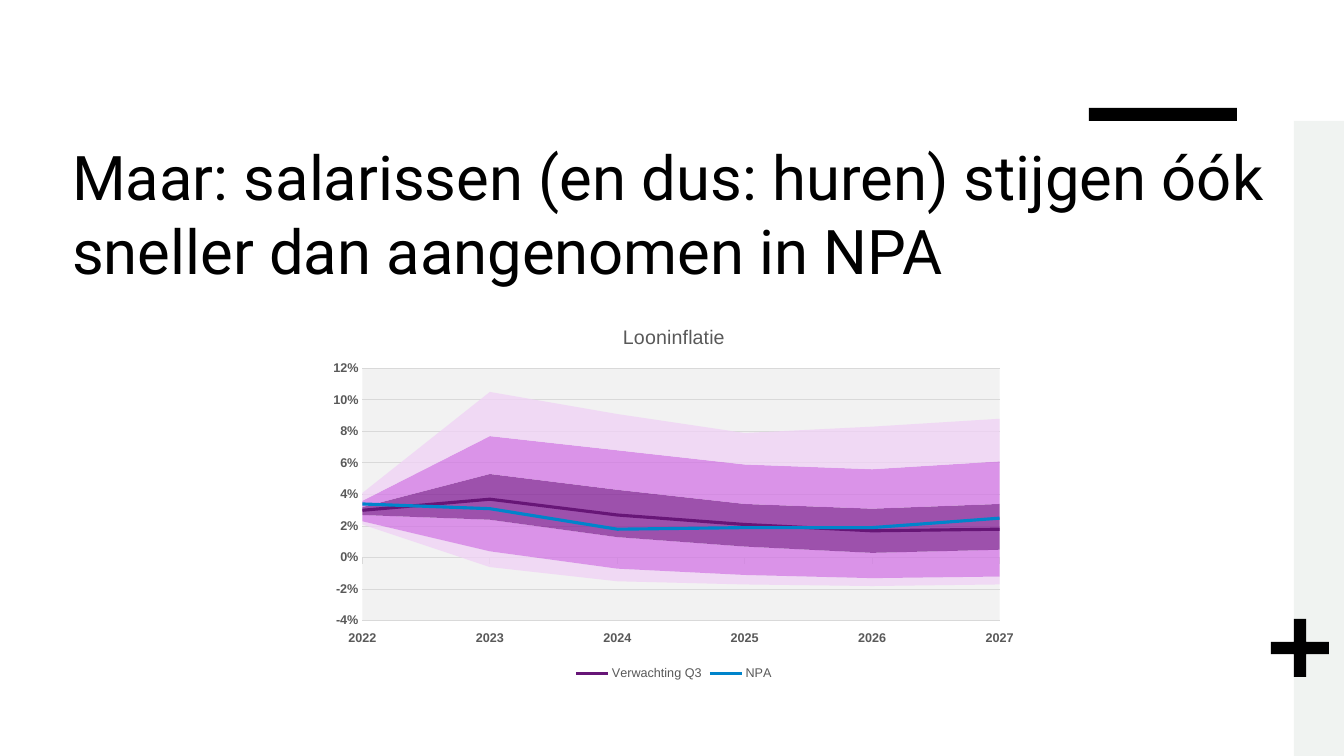
import lxml.etree
import pptx
import pptx.chart.data
import pptx.dml.color
import pptx.enum.chart
import pptx.enum.shapes
import pptx.enum.text
import pptx.oxml
import pptx.oxml.ns
import pptx.util

PX = 914400 / 100.8
COLORS = {
    "black": "000000", "white": "FFFFFF", "strip": "F0F3F1",
    "plot": "F2F2F2", "grid": "D9D9D9", "label": "595959",
    "outer": "F0D1F6", "middle": "D274E5", "inner": "811C95",
    "forecast": "671677", "npa": "0084CB",
}
YEARS = ["2022", "2023", "2024", "2025", "2026", "2027"]
BANDS = [
    (None, [0.021, -0.006, -0.015, -0.017, -0.018, -0.017]),
    ("outer", [0.002, 0.01, 0.008, 0.006, 0.005, 0.005]),
    ("middle", [0.004, 0.02, 0.02, 0.018, 0.016, 0.017]),
    ("inner", [0.005, 0.029, 0.03, 0.027, 0.028, 0.029]),
    ("middle", [0.004, 0.024, 0.025, 0.025, 0.025, 0.027]),
    ("outer", [0.005, 0.028, 0.023, 0.02, 0.027, 0.027]),
]
LINES = [
    ("Verwachting Q3", "forecast", [0.03, 0.037, 0.027, 0.021, 0.017, 0.018]),
    ("NPA", "npa", [0.034, 0.031, 0.018, 0.019, 0.019, 0.025]),
]


def emu(*lengths):
    return [pptx.util.Emu(round(length * PX)) for length in lengths]


def rgb(name):
    return pptx.dml.color.RGBColor.from_string(COLORS[name])


def chart_element(tag, **attributes):
    element = pptx.oxml.parse_xml(
        f'<c:{tag} {pptx.oxml.ns.nsdecls("c")}/>')
    for name, value in attributes.items():
        element.set(name, str(value))
    return element


def style_font(font, size, color="label", bold=False, name="Arial"):
    font.name = name
    font.size = pptx.util.Pt(size)
    font.bold = bold
    font.color.rgb = rgb(color)


def add_ornament(slide, kind, box, color):
    ornament = slide.shapes.add_shape(kind, *emu(*box))
    ornament.shadow.inherit = False
    ornament.fill.solid()
    ornament.fill.fore_color.rgb = rgb(color)
    ornament.line.fill.background()
    return ornament


def add_decoration(slide):
    kinds = pptx.enum.shapes.MSO_SHAPE
    add_ornament(slide, kinds.RECTANGLE, (1089, 108, 148, 13), "black")
    add_ornament(slide, kinds.RECTANGLE, (1294, 121, 50, 635), "strip")
    plus = add_ornament(slide, kinds.CROSS, (1271, 619, 58, 58), "black")
    plus.adjustments[0] = 0.395


def fill_title(slide, box, text):
    title = slide.shapes.title
    title.left, title.top, title.width, title.height = emu(*box)
    frame = title.text_frame
    frame.text = text
    frame.word_wrap = True
    frame.auto_size = pptx.enum.text.MSO_AUTO_SIZE.NONE
    frame.vertical_anchor = pptx.enum.text.MSO_ANCHOR.BOTTOM
    paragraph = frame.paragraphs[0]
    paragraph.alignment = pptx.enum.text.PP_ALIGN.LEFT
    style_font(paragraph.font, 44, "black", name="Roboto")


def style_series(plot):
    series = list(plot.series)
    for band, (color, _) in zip(series, BANDS):
        band.format.line.fill.background()
        if color is None:
            band.format.fill.background()
            continue
        band.format.fill.solid()
        band.format.fill.fore_color.rgb = rgb(color)
        swatch = band.format.fill._xPr.find(".//" + pptx.oxml.ns.qn("a:srgbClr"))
        lxml.etree.SubElement(swatch, pptx.oxml.ns.qn("a:alpha"), val="75000")
    for line, (_, color, _) in zip(series[len(BANDS):], LINES):
        line.format.line.color.rgb = rgb(color)
        line.format.line.width = pptx.util.Pt(2.25)
    return series[len(BANDS):]


def move_to_line_plot(chart, line_series):
    """Draw the given area series as lines on the same axes."""
    area_plot = chart.plots[0]._element
    line_plot = chart_element("lineChart")
    line_plot.append(chart_element("grouping", val="standard"))
    line_plot.append(chart_element("varyColors", val=0))
    for series in line_series:
        ser = series._element
        line_plot.append(ser)
        marker = chart_element("marker")
        marker.append(chart_element("symbol", val="none"))
        ser.find(pptx.oxml.ns.qn("c:spPr")).addnext(marker)
        ser.append(chart_element("smooth", val=0))
    line_plot.append(chart_element("marker", val=1))
    for axis_id in area_plot.findall(pptx.oxml.ns.qn("c:axId")):
        line_plot.append(chart_element("axId", val=axis_id.get("val")))
    area_plot.addnext(line_plot)


def style_axes(chart):
    ticks = pptx.enum.chart.XL_TICK_MARK
    years, rates = chart.category_axis, chart.value_axis
    for axis in (years, rates):
        style_font(axis.tick_labels.font, 9, bold=True)
        axis.minor_tick_mark = ticks.NONE
    years.has_major_gridlines = False
    years.major_tick_mark = ticks.OUTSIDE
    years.tick_label_position = pptx.enum.chart.XL_TICK_LABEL_POSITION.LOW
    rates.minimum_scale, rates.maximum_scale = -0.04, 0.12
    rates.major_unit = 0.02
    rates.major_tick_mark = ticks.NONE
    rates.tick_labels.number_format = "0%"
    rates.tick_labels.number_format_is_linked = False
    rates.format.line.fill.background()
    rates.has_major_gridlines = True
    for line in (years.format.line, rates.major_gridlines.format.line):
        line.color.rgb = rgb("grid")
        line.width = pptx.util.Pt(0.75)
    for crossing in rates._element.findall(pptx.oxml.ns.qn("c:crossBetween")):
        crossing.set("val", "midCat")


def style_legend(chart):
    chart.has_legend = True
    legend = chart.legend
    legend.position = pptx.enum.chart.XL_LEGEND_POSITION.BOTTOM
    legend.include_in_layout = False
    style_font(legend.font, 9)
    position = legend._element.find(pptx.oxml.ns.qn("c:legendPos"))
    for index in reversed(range(len(BANDS))):
        entry = chart_element("legendEntry")
        entry.append(chart_element("idx", val=index))
        entry.append(chart_element("delete", val=1))
        position.addnext(entry)


def style_backgrounds(chart, plot_box):
    """Fill chart and plot; plot_box holds fractions of the chart box."""
    def fill(color):
        return pptx.oxml.parse_xml(
            f'<c:spPr {pptx.oxml.ns.nsdecls("c", "a")}><a:solidFill>'
            f'<a:srgbClr val="{COLORS[color]}"/></a:solidFill>'
            '<a:ln><a:noFill/></a:ln></c:spPr>')

    chart_space = chart._chartSpace
    chart_space.chart.addnext(fill("white"))
    plot_area = chart_space.chart.plotArea
    plot_area.append(fill("plot"))
    for layout in plot_area.findall(pptx.oxml.ns.qn("c:layout")):
        plot_area.remove(layout)
    layout, manual = chart_element("layout"), chart_element("manualLayout")
    layout.append(manual)
    manual.append(chart_element("layoutTarget", val="inner"))
    for tag in ("xMode", "yMode"):
        manual.append(chart_element(tag, val="edge"))
    for tag, value in zip("xywh", plot_box):
        manual.append(chart_element(tag, val=value))
    plot_area.insert(0, layout)


def add_wage_chart(slide, box):
    wages = pptx.chart.data.CategoryChartData(number_format="0%")
    wages.categories = YEARS
    for number, (_, values) in enumerate(BANDS, 1):
        wages.add_series(f"Series {number}", values)
    for name, _, values in LINES:
        wages.add_series(name, values)
    chart = slide.shapes.add_chart(
        pptx.enum.chart.XL_CHART_TYPE.AREA_STACKED, *emu(*box), wages).chart
    style_font(chart.font, 10, "black")
    chart.has_title = True
    heading = chart.chart_title.text_frame
    heading.text = "Looninflatie"
    style_font(heading.paragraphs[0].font, 14)
    chart.chart_title.include_in_layout = False
    chart.plots[0].vary_by_categories = False
    move_to_line_plot(chart, style_series(chart.plots[0]))
    style_axes(chart)
    style_legend(chart)
    style_backgrounds(chart, (0.06, 0.16, 0.9, 0.67))


def main():
    deck = pptx.Presentation()
    deck.slide_width, deck.slide_height = emu(1344, 756)
    slide = deck.slides.add_slide(deck.slide_layouts[5])
    add_decoration(slide)
    fill_title(slide, (62, 133, 1222, 159),
               "Maar: salarissen (en dus: huren) stijgen óók "
               "sneller dan aangenomen in NPA")
    add_wage_chart(slide, (320, 308, 708, 377))
    deck.save("out.pptx")


if __name__ == "__main__":
    main()
